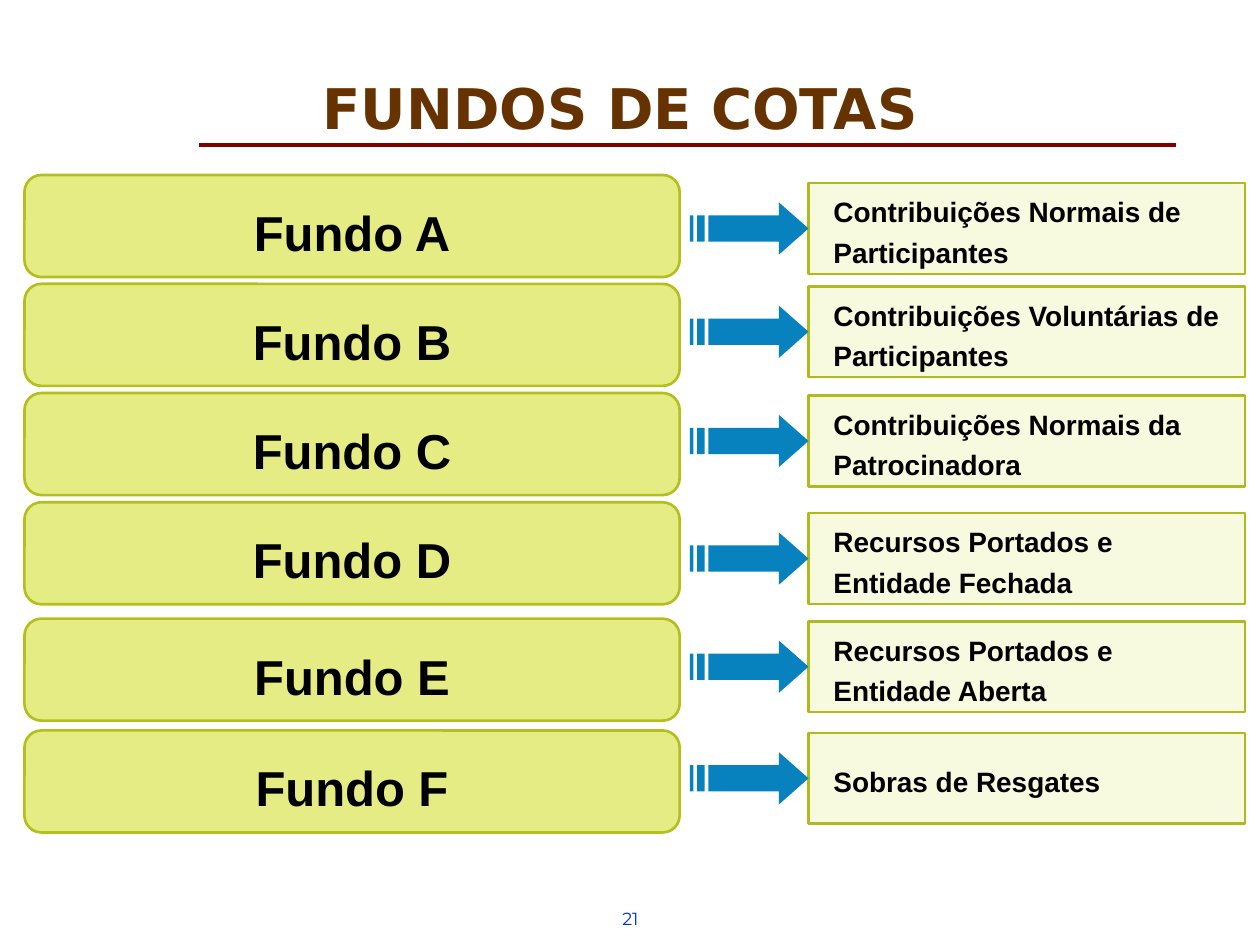
import pptx
import pptx.util
import pptx.dml.color
import pptx.enum.shapes
import pptx.enum.text
import pptx.oxml

Pt = pptx.util.Pt
MSO_SHAPE = pptx.enum.shapes.MSO_SHAPE
PP_ALIGN = pptx.enum.text.PP_ALIGN
MSO_ANCHOR = pptx.enum.text.MSO_ANCHOR

COLORS = {
    "title": "663300",
    "rule": "800000",
    "number": "0033CC",
    "fund_fill": "D4E033",
    "fund_line": "B3BF1D",
    "source_fill": "EEF3AF",
    "source_line": "AFBA1C",
    "arrow": "0782BF",
    "text": "000000",
}

FUND_LEFT, FUND_WIDTH, FUND_HEIGHT = 14, 374.4, 58.3
SOURCE_LEFT, SOURCE_WIDTH, SOURCE_HEIGHT = 462, 249.5, 52
ARROW_LEFT, ARROW_WIDTH, ARROW_HEIGHT = 394.2, 67.8, 30

# fund, its top, where its money comes from, top of that box
ROWS = [
    ("Fundo A", 100, "Contribuições Normais de Participantes", 104.6),
    ("Fundo B", 162.2, "Contribuições Voluntárias de Participantes", 163.6),
    ("Fundo C", 224.6, "Contribuições Normais da Patrocinadora", 226),
    ("Fundo D", 287, "Recursos Portados e Entidade Fechada", 293.2),
    ("Fundo E", 353.5, "Recursos Portados e Entidade Aberta", 355),
    ("Fundo F", 417.4, "Sobras de Resgates", 418.8),
]


def add_text(paragraph, text, font_name, size, color, bold=True):
    run = paragraph.add_run()
    run.text = text
    run.font.name = font_name
    run.font.size = Pt(size)
    run.font.bold = bold
    run.font.color.rgb = pptx.dml.color.RGBColor.from_string(COLORS[color])


def add_box(kind, left, top, width, height, role, opacity, text, size):
    """Add a translucent box with bold text and return its paragraph."""
    shape = slide.shapes.add_shape(kind, Pt(left), Pt(top), Pt(width), Pt(height))
    shape.shadow.inherit = False
    shape.fill.solid()
    shape.fill.fore_color.rgb = pptx.dml.color.RGBColor.from_string(COLORS[role + "_fill"])
    fill_color = shape._element.spPr.find(".//" + pptx.oxml.ns.qn("a:srgbClr"))
    alpha = pptx.oxml.parse_xml(
        f'<a:alpha {pptx.oxml.ns.nsdecls("a")} val="{opacity * 1000}"/>')
    fill_color.append(alpha)
    shape.line.color.rgb = pptx.dml.color.RGBColor.from_string(COLORS[role + "_line"])
    shape.line.width = Pt(1.5)
    shape.text_frame.word_wrap = True
    shape.text_frame.vertical_anchor = MSO_ANCHOR.MIDDLE
    paragraph = shape.text_frame.paragraphs[0]
    paragraph.line_spacing = 1.2
    add_text(paragraph, text, "Arial", size, "text")
    return paragraph


presentation = pptx.Presentation()
presentation.slide_width = Pt(720)
presentation.slide_height = Pt(540)
slide = presentation.slides.add_slide(presentation.slide_layouts[5])

# Title and the rule below it
title = slide.shapes.title
title.left, title.top, title.width, title.height = Pt(19.5), Pt(26), Pt(670), Pt(54)
frame = title.text_frame
frame.margin_left = frame.margin_top = frame.margin_right = frame.margin_bottom = 0
frame.word_wrap = True
frame.vertical_anchor = MSO_ANCHOR.BOTTOM
paragraph = frame.paragraphs[0]
paragraph.alignment = PP_ALIGN.CENTER
paragraph.line_spacing = 0.8
add_text(paragraph, "FUNDOS DE COTAS", "DejaVu Sans", 32, "title")

rule = slide.shapes.add_connector(
    pptx.enum.shapes.MSO_CONNECTOR.STRAIGHT, Pt(114), Pt(82.8), Pt(672), Pt(82.8))
rule.line.color.rgb = pptx.dml.color.RGBColor.from_string(COLORS["rule"])
rule.line.width = Pt(2)
rule._element.spPr.append(
    pptx.oxml.parse_xml(f'<a:effectLst {pptx.oxml.ns.nsdecls("a")}/>'))

# One row per fund: fund, striped arrow, source of the money
for fund, fund_top, source, source_top in ROWS:
    paragraph = add_box(MSO_SHAPE.FLOWCHART_ALTERNATE_PROCESS, FUND_LEFT, fund_top,
                        FUND_WIDTH, FUND_HEIGHT, "fund", 60, fund, 28)
    paragraph.alignment = PP_ALIGN.CENTER

    paragraph = add_box(MSO_SHAPE.RECTANGLE, SOURCE_LEFT, source_top,
                        SOURCE_WIDTH, SOURCE_HEIGHT, "source", 40, source, 16)
    paragraph.alignment = PP_ALIGN.LEFT
    paragraph._p.get_or_add_pPr().set("marL", str(Pt(7.2)))

    # The arrow's stripes lie on 32nds of its width; its shaft is half its height
    middle = source_top + SOURCE_HEIGHT / 2
    arrow_top, shaft_top, center, shaft_bottom, arrow_bottom = [
        Pt(middle + ARROW_HEIGHT * part / 4) for part in (-2, -1, 0, 1, 2)]
    start, stripe_1, stripe_2, stripe_3, shaft, head, tip = [
        Pt(ARROW_LEFT + ARROW_WIDTH * part / 32) for part in (0, 1, 2, 4, 5, 24, 32)]
    builder = slide.shapes.build_freeform(head, arrow_top)
    builder.add_line_segments([
        (head, shaft_top), (shaft, shaft_top), (shaft, shaft_bottom),
        (head, shaft_bottom), (head, arrow_bottom), (tip, center)])
    for left, right in ((stripe_2, stripe_3), (start, stripe_1)):
        builder.move_to(left, shaft_top)
        builder.add_line_segments([
            (left, shaft_bottom), (right, shaft_bottom), (right, shaft_top)])
    arrow = builder.convert_to_shape()
    arrow.shadow.inherit = False
    arrow.fill.solid()
    arrow.fill.fore_color.rgb = pptx.dml.color.RGBColor.from_string(COLORS["arrow"])
    arrow.line.fill.background()

# Page number
number = slide.shapes.add_textbox(Pt(348.5), Pt(515.5), Pt(51), Pt(24))
number.text_frame.word_wrap = True
add_text(number.text_frame.paragraphs[0], "21", "Montserrat", 10, "number", bold=False)

presentation.save("out.pptx")
